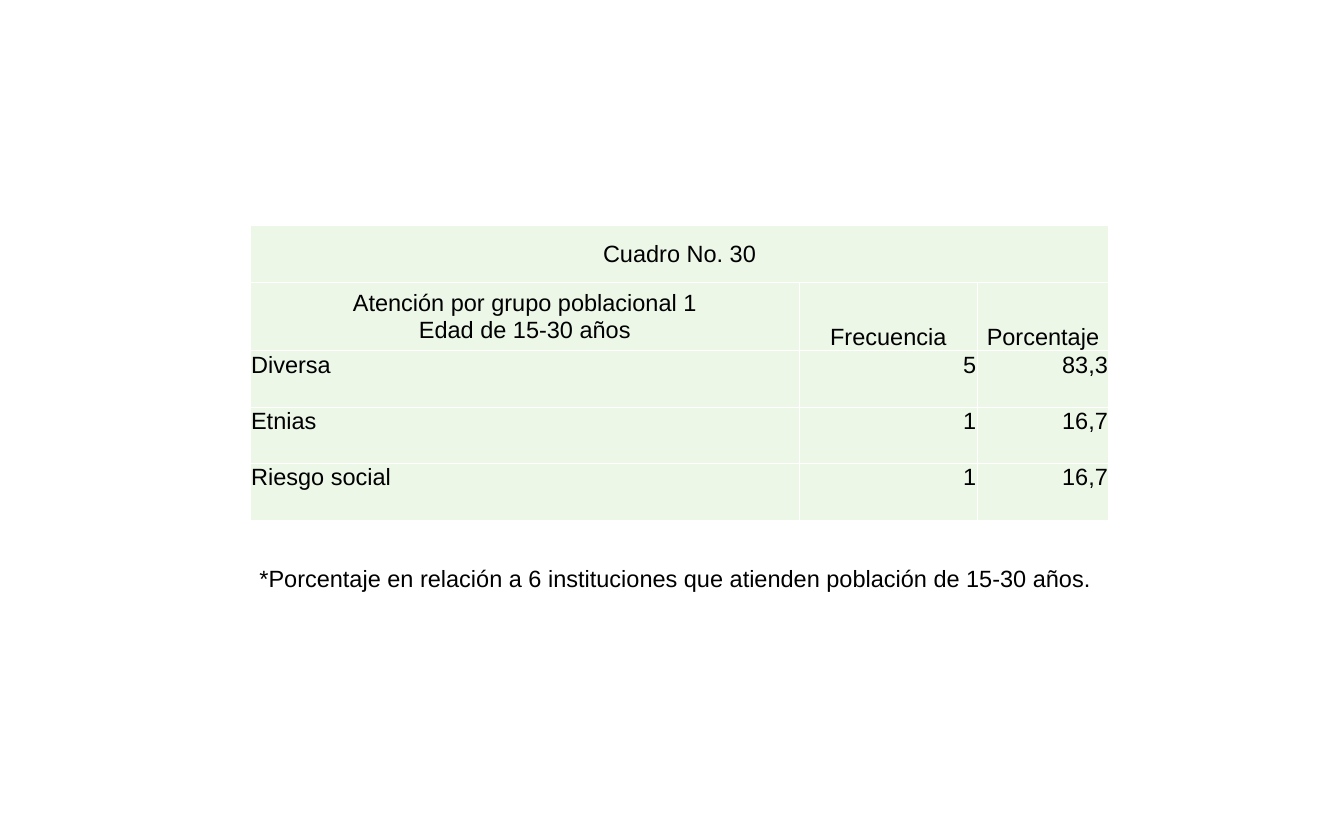
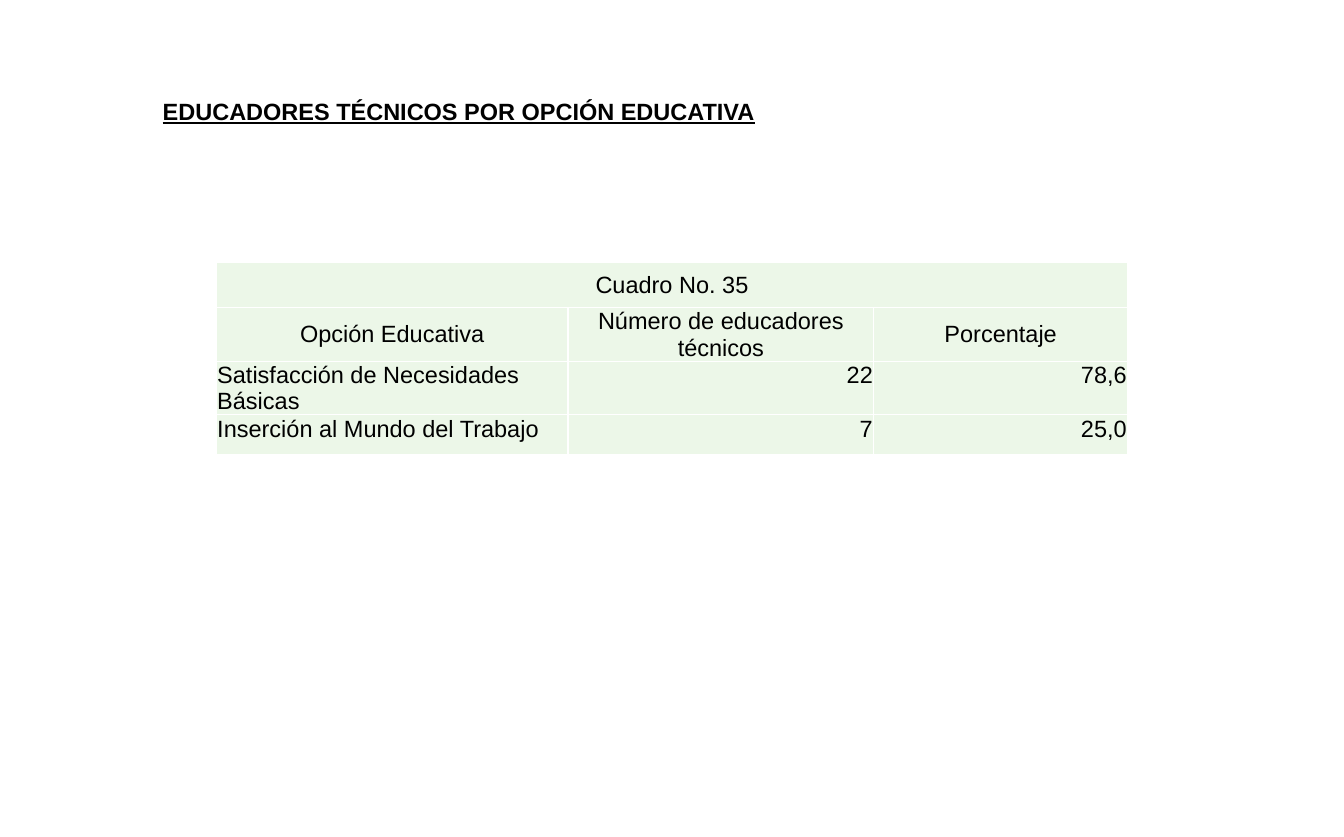
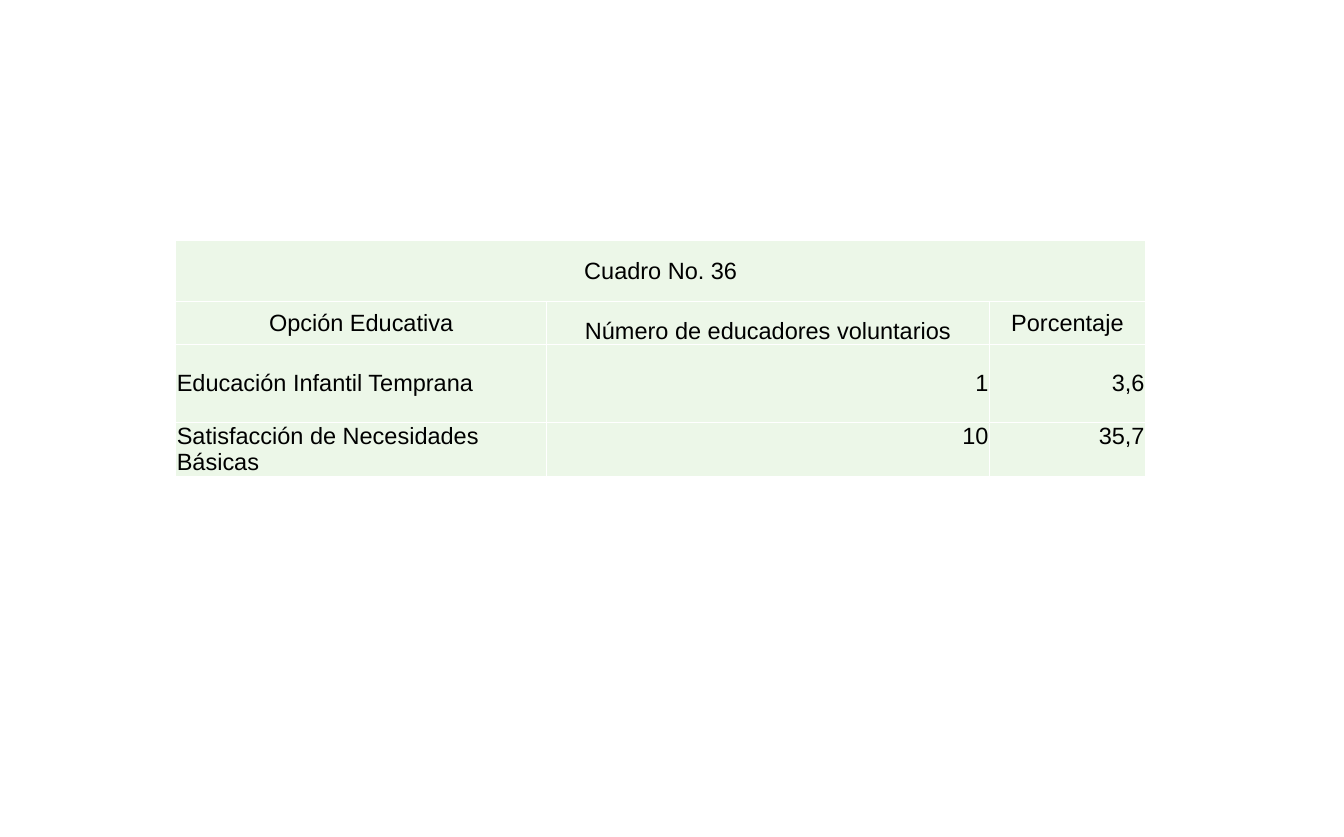
from dataclasses import dataclass

from lxml import etree
from pptx import Presentation
from pptx.dml.color import RGBColor
from pptx.enum.text import MSO_ANCHOR, PP_ALIGN
from pptx.oxml.ns import qn
from pptx.slide import Slide
from pptx.table import _Cell
from pptx.text.text import TextFrame
from pptx.util import Inches, Pt

LEFT, CENTER, RIGHT = PP_ALIGN.LEFT, PP_ALIGN.CENTER, PP_ALIGN.RIGHT
TOP, MIDDLE, BOTTOM = MSO_ANCHOR.TOP, MSO_ANCHOR.MIDDLE, MSO_ANCHOR.BOTTOM

BLACK = RGBColor(0x00, 0x00, 0x00)
WHITE = RGBColor(0xFF, 0xFF, 0xFF)
PALE_GREEN = RGBColor(0xEC, 0xF7, 0xE8)

FONT = "Arial"
TEXT_SIZE = Pt(18)
BORDER_WIDTH = Pt(1)
CELL_INSET = Inches(0.01)
LINE_BOX_HEIGHT = 0.4
SLIDE_WIDTH, SLIDE_HEIGHT = 14.29, 8.9
TITLE_ONLY, BLANK = 5, 6


@dataclass(frozen=True)
class TextLine:
    text: str
    left: float
    top: float
    width: float


@dataclass(frozen=True)
class FrequencyTable:
    """Lengths are inches; anchors hold one entry per cell of the header row,
    and middle_rows the row numbers whose values are centred vertically."""
    caption: str
    header: tuple[str, ...]
    body: tuple[tuple[str, ...], ...]
    left: float
    top: float
    columns: tuple[float, ...]
    rows: tuple[float, ...]
    anchors: tuple[MSO_ANCHOR, ...] = (MIDDLE, BOTTOM, MIDDLE)
    middle_rows: tuple[int, ...] = ()


@dataclass(frozen=True)
class Page:
    table: FrequencyTable
    title: TextLine | None = None
    footnote: TextLine | None = None


PAGES = (
    Page(
        FrequencyTable(
            "Cuadro No. 30",
            ("Atención por grupo poblacional 1\nEdad de 15-30 años",
             "Frecuencia", "Porcentaje"),
            (("Diversa", "5", "83,3"),
             ("Etnias", "1", "16,7"),
             ("Riesgo social", "1", "16,7")),
            left=2.66, top=2.4,
            columns=(5.84, 1.89, 1.4),
            rows=(0.6, 0.73, 0.6, 0.6, 0.6),
            anchors=(MIDDLE, BOTTOM, BOTTOM),
        ),
        footnote=TextLine(
            "*Porcentaje en relación a 6 instituciones que atienden "
            "población de 15-30 años.", 2.66, 5.95, 9.06),
    ),
    Page(
        FrequencyTable(
            "Cuadro No. 35",
            ("Opción Educativa", "Número de educadores técnicos", "Porcentaje"),
            (("Satisfacción de Necesidades Básicas", "22", "78,6"),
             ("Inserción al Mundo del Trabajo", "7", "25,0")),
            left=2.3, top=2.79,
            columns=(3.74, 3.25, 2.7),
            rows=(0.48, 0.57, 0.57, 0.42),
        ),
        title=TextLine("EDUCADORES TÉCNICOS POR OPCIÓN EDUCATIVA",
                       1.63, 0.98, 7.24),
    ),
    Page(
        FrequencyTable(
            "Cuadro No. 36",
            ("Opción Educativa", "Número de educadores voluntarios",
             "Porcentaje"),
            (("Educación Infantil Temprana", "1", "3,6"),
             ("Satisfacción de Necesidades Básicas", "10", "35,7")),
            left=1.87, top=2.56,
            columns=(3.94, 4.71, 1.66),
            rows=(0.65, 0.45, 0.83, 0.58),
            middle_rows=(2,),
        ),
    ),
)


def write_text(frame: TextFrame, text: str, align: PP_ALIGN = LEFT,
               heading: bool = False) -> None:
    frame.text = text
    for paragraph in frame.paragraphs:
        paragraph.alignment = align
        font = paragraph.font
        font.name, font.size = FONT, TEXT_SIZE
        font.bold = font.underline = heading
        font.color.rgb = BLACK


def add_borders(cell: _Cell) -> None:
    properties = cell._tc.get_or_add_tcPr()
    for side in ("a:lnL", "a:lnR", "a:lnT", "a:lnB"):
        line = etree.SubElement(properties, qn(side), w=str(BORDER_WIDTH))
        fill = etree.SubElement(line, qn("a:solidFill"))
        etree.SubElement(fill, qn("a:srgbClr"), val=str(WHITE))


def style_cell(cell: _Cell) -> None:
    add_borders(cell)
    cell.fill.solid()
    cell.fill.fore_color.rgb = PALE_GREEN
    cell.margin_left = cell.margin_right = cell.margin_top = CELL_INSET
    cell.margin_bottom = 0


def fill_cell(cell: _Cell, text: str, align: PP_ALIGN,
              anchor: MSO_ANCHOR) -> None:
    write_text(cell.text_frame, text, align)
    cell.vertical_anchor = anchor


def draw_table(slide: Slide, content: FrequencyTable) -> None:
    frame = slide.shapes.add_table(
        len(content.rows), len(content.columns),
        Inches(content.left), Inches(content.top),
        Inches(sum(content.columns)), Inches(sum(content.rows)))
    table = frame.table
    table.first_row = table.horz_banding = False
    for column, width in zip(table.columns, content.columns):
        column.width = Inches(width)
    for row, height in zip(table.rows, content.rows):
        row.height = Inches(height)
    for cell in table.iter_cells():
        style_cell(cell)

    caption = table.cell(0, 0)
    caption.merge(table.cell(0, len(content.columns) - 1))
    fill_cell(caption, content.caption, CENTER, MIDDLE)
    for index, (text, anchor) in enumerate(zip(content.header, content.anchors)):
        fill_cell(table.cell(1, index), text, CENTER, anchor)
    for row_index, values in enumerate(content.body, start=2):
        anchor = MIDDLE if row_index in content.middle_rows else TOP
        for index, text in enumerate(values):
            align = RIGHT if index else LEFT
            fill_cell(table.cell(row_index, index), text, align, anchor)


def place_title(slide: Slide, line: TextLine) -> None:
    title = slide.shapes.title
    title.left, title.top = Inches(line.left), Inches(line.top)
    title.width, title.height = Inches(line.width), Inches(LINE_BOX_HEIGHT)
    title.text_frame.vertical_anchor = TOP
    write_text(title.text_frame, line.text, heading=True)


def draw_footnote(slide: Slide, line: TextLine) -> None:
    box = slide.shapes.add_textbox(
        Inches(line.left), Inches(line.top),
        Inches(line.width), Inches(LINE_BOX_HEIGHT))
    box.text_frame.word_wrap = True
    write_text(box.text_frame, line.text)


def main() -> None:
    deck = Presentation()
    deck.slide_width = Inches(SLIDE_WIDTH)
    deck.slide_height = Inches(SLIDE_HEIGHT)
    for page in PAGES:
        layout = deck.slide_layouts[TITLE_ONLY if page.title else BLANK]
        slide = deck.slides.add_slide(layout)
        draw_table(slide, page.table)
        if page.title:
            place_title(slide, page.title)
        if page.footnote:
            draw_footnote(slide, page.footnote)
    deck.save("out.pptx")


if __name__ == "__main__":
    main()
